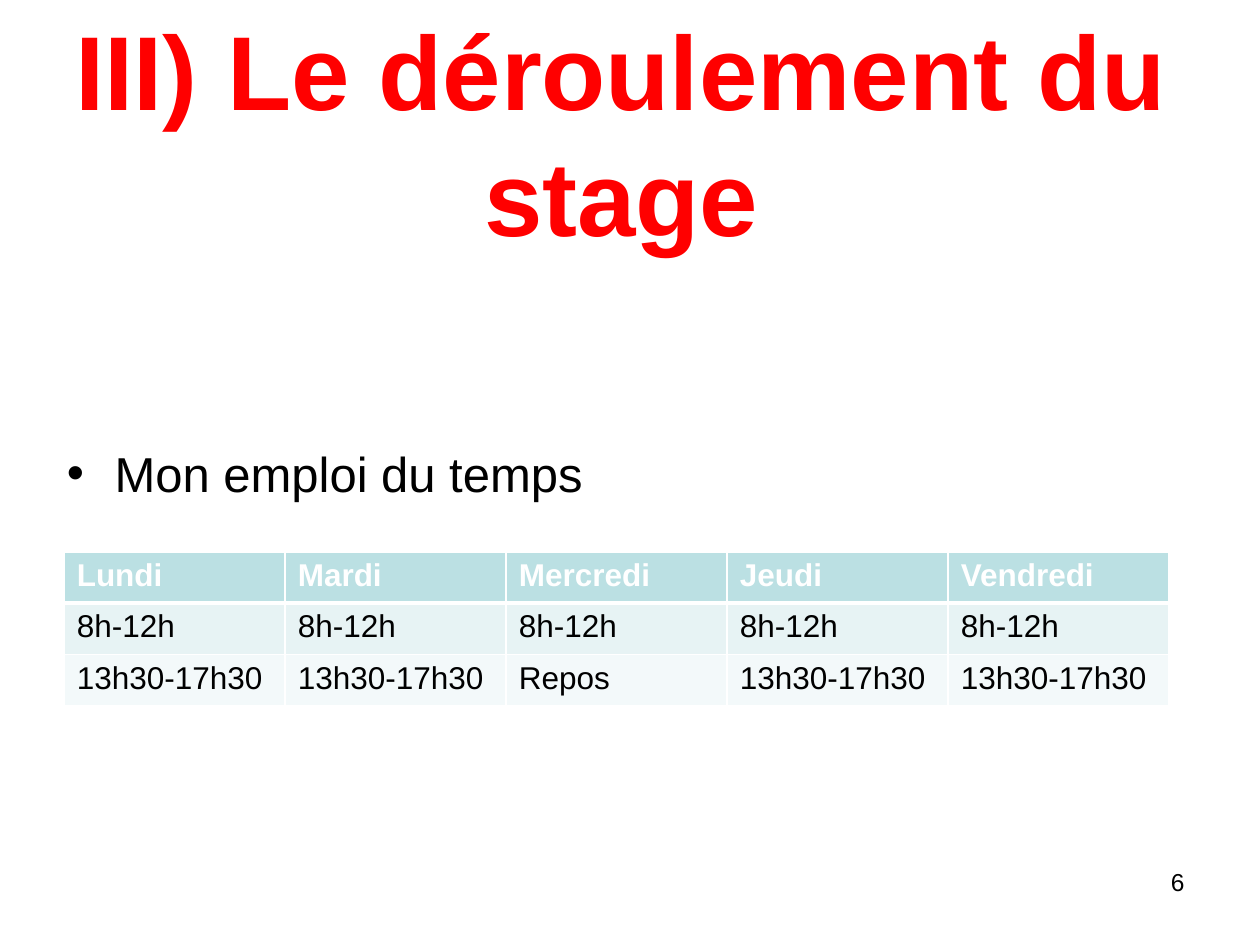
from dataclasses import dataclass

from lxml import etree
from pptx import Presentation
from pptx.dml.color import RGBColor
from pptx.enum import text
from pptx.oxml.ns import qn
from pptx.util import Inches, Pt


@dataclass(frozen=True)
class Theme:
    font: str = "Arial"
    title_red: str = "FF0000"
    ink: str = "000000"
    white: str = "FFFFFF"
    row_fills: tuple = ("BBE0E3", "E7F3F4", "F3F9FA")
    title_size: int = 60
    body_size: int = 28
    table_size: int = 18
    number_size: int = 14


THEME = Theme()
DAYS = ["Lundi", "Mardi", "Mercredi", "Jeudi", "Vendredi"]
MORNING = "8h-12h"
AFTERNOON = "13h30-17h30"
TIMETABLE = [
    DAYS,
    [MORNING] * len(DAYS),
    ["Repos" if day == "Mercredi" else AFTERNOON for day in DAYS],
]


def set_all(target, values):
    for name, value in values.items():
        setattr(target, name, value)


def place(box, left, top, width, height):
    set_all(box, {"left": Inches(left), "top": Inches(top),
                  "width": Inches(width), "height": Inches(height)})


def write(frame, words, size, color, bold=False, align=text.PP_ALIGN.LEFT):
    paragraph = frame.paragraphs[0]
    paragraph.alignment = align
    run = paragraph.add_run()
    run.text = words
    set_all(run.font, {"name": THEME.font, "size": Pt(size), "bold": bold})
    run.font.color.rgb = RGBColor.from_string(color)


def add_title(slide):
    title = slide.shapes.title
    place(title, 0.43, 0.84, 9, 1.25)
    set_all(title.text_frame, {"word_wrap": True,
                               "auto_size": text.MSO_AUTO_SIZE.NONE,
                               "vertical_anchor": text.MSO_ANCHOR.BOTTOM})
    write(title.text_frame, "III) Le déroulement du stage", THEME.title_size,
          THEME.title_red, True, text.PP_ALIGN.CENTER)


def add_bullet(slide):
    body = slide.placeholders[1]
    place(body, 0.43, 2.88, 9, 2.99)
    frame = body.text_frame
    set_all(frame, {"word_wrap": True, "margin_top": Inches(0.64),
                    "auto_size": text.MSO_AUTO_SIZE.NONE,
                    "vertical_anchor": text.MSO_ANCHOR.TOP})
    paragraph = frame.paragraphs[0]
    paragraph.space_before = Pt(0)
    # Hanging indent and bullet sign
    properties = paragraph._p.get_or_add_pPr()
    properties.set("marL", str(Inches(0.38)))
    properties.set("indent", str(-Inches(0.38)))
    etree.SubElement(properties, qn("a:buChar")).set("char", "•")
    write(frame, "Mon emploi du temps", THEME.body_size, THEME.ink,
          align=text.PP_ALIGN.JUSTIFY)


def add_border(cell, side, points):
    properties = cell._tc.get_or_add_tcPr()
    line = etree.SubElement(properties, qn(f"a:ln{side}"), w=str(Pt(points)))
    fill = etree.SubElement(line, qn("a:solidFill"))
    etree.SubElement(fill, qn("a:srgbClr"), val=THEME.white)


def add_timetable(slide):
    table = slide.shapes.add_table(
        len(TIMETABLE), len(DAYS), Inches(0.51), Inches(4.38),
        Inches(8.77), Inches(1.22)).table
    for row, entries in enumerate(TIMETABLE):
        header = row == 0
        widths = {"L": 1, "R": 1, "T": 3 if row == 1 else 1,
                  "B": 3 if header else 1}
        for column, entry in enumerate(entries):
            cell = table.cell(row, column)
            for side, points in widths.items():
                add_border(cell, side, points)
            cell.fill.solid()
            cell.fill.fore_color.rgb = RGBColor.from_string(THEME.row_fills[row])
            write(cell.text_frame, entry, THEME.table_size,
                  THEME.white if header else THEME.ink, header)


def add_page_number(slide):
    number = slide.shapes.add_textbox(
        Inches(7.17), Inches(6.83), Inches(2.33), Inches(0.52))
    number.text_frame.word_wrap = True
    write(number.text_frame, "6", THEME.number_size, THEME.ink,
          align=text.PP_ALIGN.RIGHT)


def main():
    deck = Presentation()
    set_all(deck, {"slide_width": Inches(10), "slide_height": Inches(7.5)})
    slide = deck.slides.add_slide(deck.slide_layouts[1])
    add_title(slide)
    add_bullet(slide)
    add_page_number(slide)
    add_timetable(slide)
    deck.save("out.pptx")


if __name__ == "__main__":
    main()
